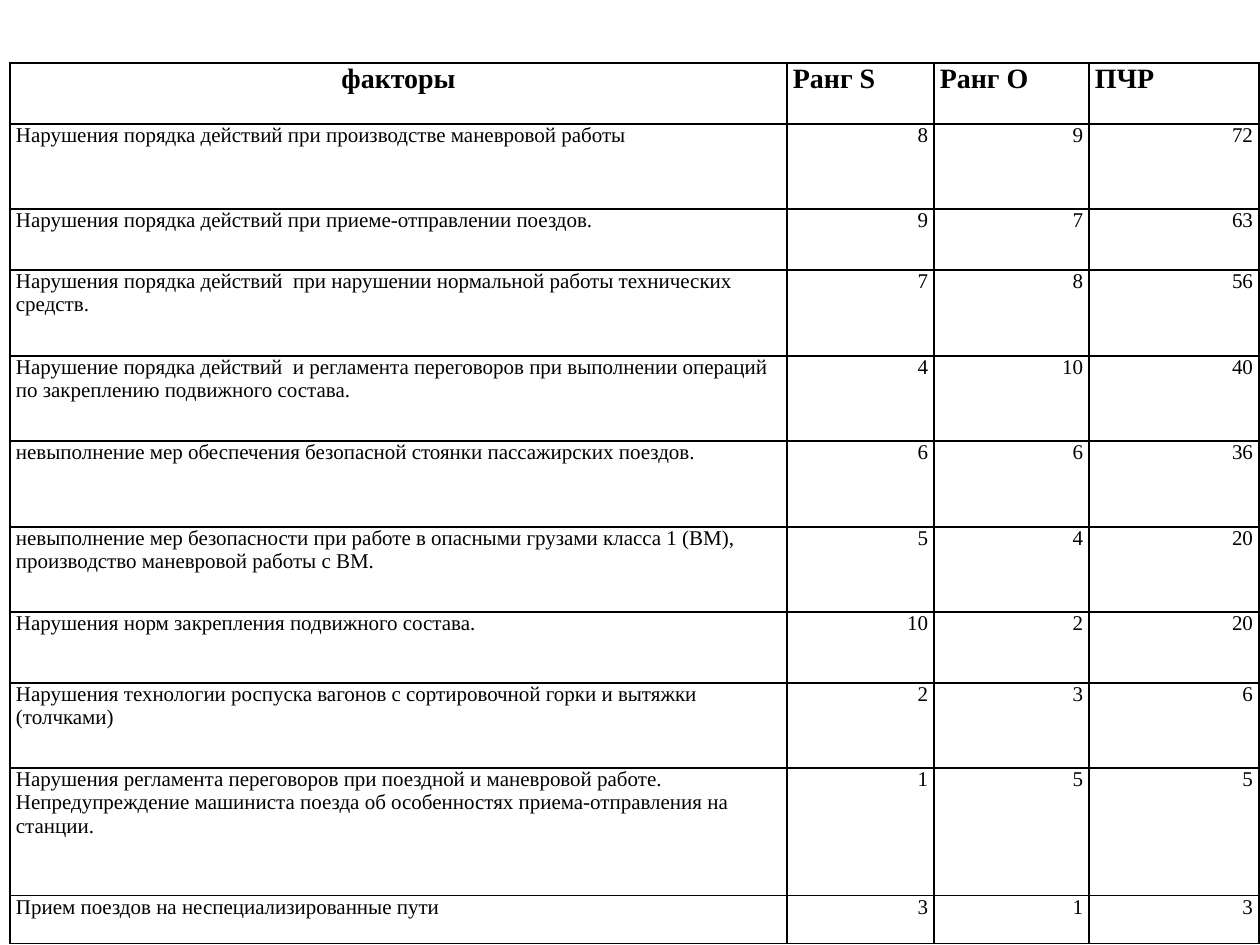
from lxml import etree
from pptx import Presentation
from pptx.dml.color import RGBColor
from pptx.enum.text import PP_ALIGN
from pptx.oxml.ns import qn
from pptx.util import Pt

LEFT, CENTER, RIGHT = PP_ALIGN.LEFT, PP_ALIGN.CENTER, PP_ALIGN.RIGHT
BLACK = RGBColor(0, 0, 0)
FONT = "Times New Roman"
SCALE = 914400 // 126
COLS = [777, 147, 155, 170]
ROWS = [61, 85, 61, 86, 85, 86, 85, 71, 85, 128, 48]
HEADS = ["факторы", "Ранг S", "Ранг O", "ПЧР"]
RISKS = [
    ("Нарушения порядка действий при производстве маневровой работы", 8, 9),
    ("Нарушения порядка действий при приеме-отправлении поездов.", 9, 7),
    ("Нарушения порядка действий  при нарушении нормальной работы "
     "технических средств.", 7, 8),
    ("Нарушение порядка действий  и регламента переговоров при выполнении "
     "операций по закреплению подвижного состава.", 4, 10),
    ("невыполнение мер обеспечения безопасной стоянки пассажирских поездов.",
     6, 6),
    ("невыполнение мер безопасности при работе в опасными грузами класса 1 "
     "(ВМ), производство маневровой работы с ВМ.", 5, 4),
    ("Нарушения норм закрепления подвижного состава.", 10, 2),
    ("Нарушения технологии роспуска вагонов с сортировочной горки и вытяжки "
     "(толчками)", 2, 3),
    ("Нарушения регламента переговоров при поездной и маневровой работе. "
     "Непредупреждение машиниста поезда об особенностях приема-отправления "
     "на станции.", 1, 5),
    ("Прием поездов на неспециализированные пути", 3, 1),
]


def px(n):
    """Turn whole pixels into EMU."""
    return n * SCALE


def add_lines(cell):
    """Draw a thin black line on each side of a cell."""
    props = cell._tc.get_or_add_tcPr()
    for side in ("a:lnL", "a:lnR", "a:lnT", "a:lnB"):
        line = etree.SubElement(props, qn(side), w=str(Pt(1)))
        fill = etree.SubElement(line, qn("a:solidFill"))
        etree.SubElement(fill, qn("a:srgbClr"), val=str(BLACK))


def fill_cell(cell, text, size, bold, align):
    """Set the text, margins and look of one cell."""
    add_lines(cell)
    cell.fill.background()
    cell.margin_left = cell.margin_right = px(6)
    cell.margin_top = cell.margin_bottom = 0
    para = cell.text_frame.paragraphs[0]
    para.alignment = align
    run = para.add_run()
    run.text = text
    font = run.font
    font.name, font.size, font.bold = FONT, Pt(size), bold
    font.color.rgb = BLACK


def add_grid(slide):
    """Add the empty table with its column and row sizes."""
    frame = slide.shapes.add_table(
        len(ROWS), len(COLS), px(10), px(63), px(sum(COLS)), px(sum(ROWS)))
    table = frame.table
    table.first_row = table.horz_banding = False
    for col, width in zip(table.columns, COLS):
        col.width = px(width)
    for row, height in zip(table.rows, ROWS):
        row.height = px(height)
    return table


def fill_grid(table):
    """Write the heads and the ranked risks; the last column is S times O."""
    for i, head in enumerate(HEADS):
        fill_cell(table.cell(0, i), head, 16, True, LEFT if i else CENTER)
    for r, (name, s, o) in enumerate(RISKS, 1):
        for i, item in enumerate((name, s, o, s * o)):
            fill_cell(table.cell(r, i), str(item), 12, False,
                      RIGHT if i else LEFT)


def main():
    """Build and save the slide."""
    deck = Presentation()
    deck.slide_width, deck.slide_height = px(1260), px(945)
    slide = deck.slides.add_slide(deck.slide_layouts[6])
    fill_grid(add_grid(slide))
    deck.save("out.pptx")


if __name__ == "__main__":
    main()
